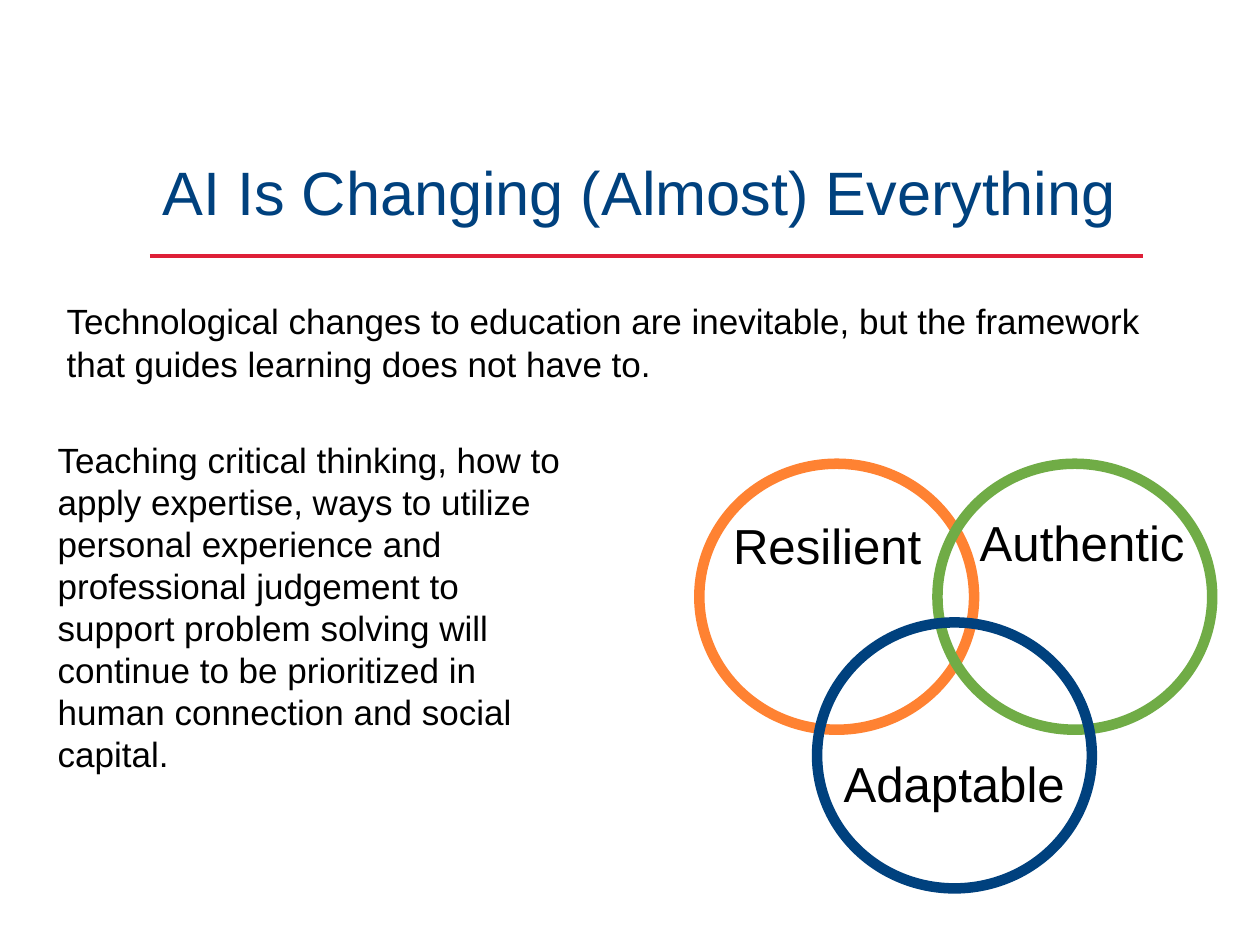
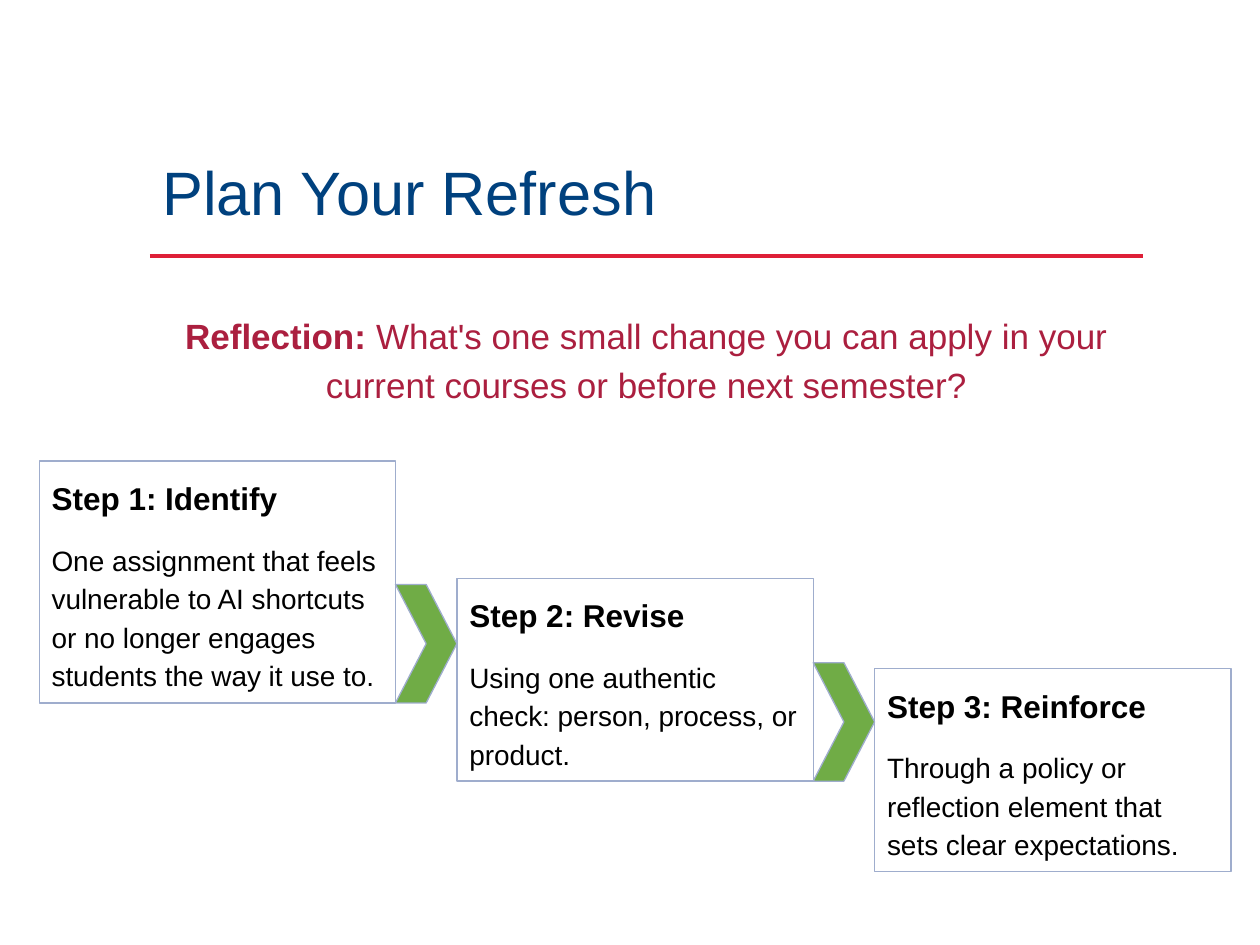
"""Build two slides on how AI changes teaching and how to plan a refresh."""
from dataclasses import dataclass

from lxml.etree import SubElement
from pptx import Presentation
from pptx.dml.color import RGBColor
from pptx.enum.shapes import MSO_CONNECTOR, MSO_SHAPE
from pptx.enum.text import MSO_ANCHOR, PP_ALIGN
from pptx.oxml.ns import qn
from pptx.util import Pt


@dataclass(frozen=True)
class Theme:
    font: str = "Arial"
    navy: str = "00417E"
    red: str = "DE1F37"
    crimson: str = "AB1F3F"
    black: str = "000000"
    orange: str = "FF8232"
    green: str = "70AC46"
    outline: str = "9FADCD"
    title_size: float = 35
    body_size: float = 20
    circle_size: float = 28.1
    heading_size: float = 18
    detail_size: float = 16


THEME = Theme()
INSET = 7.2
TITLE_LEFT, TITLE_WIDTH = 85.7, 567.4
RULE_TOP = 146.2

CHANGE_TITLE = "AI Is Changing (Almost) Everything"
CHANGE_TEXTS = [
    ("Technological changes to education are inevitable, but the framework that guides "
     "learning does not have to.", (31, 164.2, 631.4, 70.6)),
    ("Teaching critical thinking, how to apply expertise, ways to utilize personal experience "
     "and professional judgement to support problem solving will continue to be prioritized in "
     "human connection and social capital.", (25.9, 243.4, 316, 193)),
]
CIRCLE_WIDTH, CIRCLE_HEIGHT, CIRCLE_LINE = 157, 152, 6.02
CIRCLES = [
    ("Resilient", THEME.orange, (399.6, 265), (411.8, 287.3, 138.2, 71.3), PP_ALIGN.LEFT),
    ("Authentic", THEME.green, (535.7, 265), (535, 285.8, 149, 71.3), PP_ALIGN.RIGHT),
    ("Adaptable", THEME.navy, (466.9, 355.7), (466.6, 423.4, 149, 71.3), PP_ALIGN.RIGHT),
]

REFRESH_TITLE = "Plan Your Refresh"
REFLECTION = ("Reflection: ",
              "What's one small change you can apply in your current courses or before next "
              "semester?")
STEP_LEFT, STEP_WIDTH = 22.4, 203.6
CHEVRON_WIDTH, CHEVRON_HEIGHT = 35.1, 67.7
STEPS = [
    ("Step 1: Identify", "One assignment that feels vulnerable to AI shortcuts or no longer "
     "engages students the way it use to.", 263.5, 138.2),
    ("Step 2: Revise", "Using one authentic check: person, process, or product.", 330.4, 116),
    ("Step 3: Reinforce", "Through a policy or reflection element that sets clear "
     "expectations.", 382, 116),
]


def points(box):
    return [Pt(value) for value in box]


def set_frame(shape, vertical_inset=INSET, anchor=MSO_ANCHOR.TOP):
    frame = shape.text_frame
    frame.word_wrap = True
    frame.vertical_anchor = anchor
    frame.margin_left = frame.margin_right = Pt(INSET)
    frame.margin_top = frame.margin_bottom = Pt(vertical_inset)
    return frame


def style(paragraph, size, color=THEME.black, bold=None, align=PP_ALIGN.LEFT, spacing=None):
    paragraph.alignment = align
    paragraph.line_spacing = spacing
    font = paragraph.font
    font.name, font.size, font.bold = THEME.font, Pt(size), bold
    font.color.rgb = RGBColor.from_string(color)


def add_text(slide, text, box, size, color=THEME.black, align=PP_ALIGN.LEFT, spacing=None,
             **frame_options):
    frame = set_frame(slide.shapes.add_textbox(*points(box)), **frame_options)
    paragraph = frame.paragraphs[0]
    paragraph.text = text
    style(paragraph, size, color, align=align, spacing=spacing)
    return paragraph


def add_outlined(slide, kind, box, line, width, fill=None):
    shape = slide.shapes.add_shape(kind, *points(box))
    shape.shadow.inherit = False
    if fill:
        shape.fill.solid()
        shape.fill.fore_color.rgb = RGBColor.from_string(fill)
    else:
        shape.fill.background()
    shape.line.color.rgb = RGBColor.from_string(line)
    shape.line.width = Pt(width)
    return shape


def add_titled_slide(presentation, title):
    slide = presentation.slides.add_slide(presentation.slide_layouts[6])
    rule = slide.shapes.add_connector(MSO_CONNECTOR.STRAIGHT, *points(
        (TITLE_LEFT, RULE_TOP, TITLE_LEFT + TITLE_WIDTH, RULE_TOP)))
    rule.line.color.rgb = RGBColor.from_string(THEME.red)
    rule.line.width = Pt(2.5)
    SubElement(rule._element.spPr, qn("a:effectLst"))
    add_text(slide, title, (TITLE_LEFT, 63.4, TITLE_WIDTH, 70.6), THEME.title_size, THEME.navy,
             spacing=0.9, vertical_inset=INSET / 2, anchor=MSO_ANCHOR.BOTTOM)
    return slide


def build_change_slide(presentation):
    slide = add_titled_slide(presentation, CHANGE_TITLE)
    for text, box in CHANGE_TEXTS:
        add_text(slide, text, box, THEME.body_size)
    for label, color, corner, label_box, align in CIRCLES:
        add_outlined(slide, MSO_SHAPE.OVAL, (*corner, CIRCLE_WIDTH, CIRCLE_HEIGHT),
                     color, CIRCLE_LINE)
        add_text(slide, label, label_box, THEME.circle_size, align=align)


def add_step(slide, heading, detail, box):
    shape = add_outlined(slide, MSO_SHAPE.RECTANGLE, box, THEME.outline, 0.75)
    frame = set_frame(shape)
    heading_paragraph = frame.paragraphs[0]
    heading_paragraph.text = heading
    style(heading_paragraph, THEME.heading_size, bold=True, spacing=1.15)
    detail_paragraph = frame.add_paragraph()
    detail_paragraph.text = detail
    style(detail_paragraph, THEME.detail_size, spacing=1.15)
    detail_paragraph.space_before, detail_paragraph.space_after = Pt(12), Pt(2)


def build_refresh_slide(presentation):
    slide = add_titled_slide(presentation, REFRESH_TITLE)
    label, question = REFLECTION
    paragraph = add_text(slide, label, (TITLE_LEFT, 172.8, TITLE_WIDTH, 112.3), THEME.body_size,
                         THEME.crimson, PP_ALIGN.CENTER, 1.15, vertical_inset=INSET / 2)
    paragraph.runs[0].font.bold = True
    paragraph.add_run().text = question
    for index, (heading, detail, top, height) in enumerate(STEPS):
        left = STEP_LEFT + index * (STEP_WIDTH + CHEVRON_WIDTH)
        add_step(slide, heading, detail, (left, top, STEP_WIDTH, height))
        if index < len(STEPS) - 1:
            add_outlined(slide, MSO_SHAPE.CHEVRON,
                         (left + STEP_WIDTH, top + height - CHEVRON_HEIGHT,
                          CHEVRON_WIDTH, CHEVRON_HEIGHT),
                         THEME.outline, 0.75, THEME.green)


def main():
    presentation = Presentation()
    presentation.slide_width, presentation.slide_height = Pt(720), Pt(540)
    build_change_slide(presentation)
    build_refresh_slide(presentation)
    presentation.save("out.pptx")


if __name__ == "__main__":
    main()
